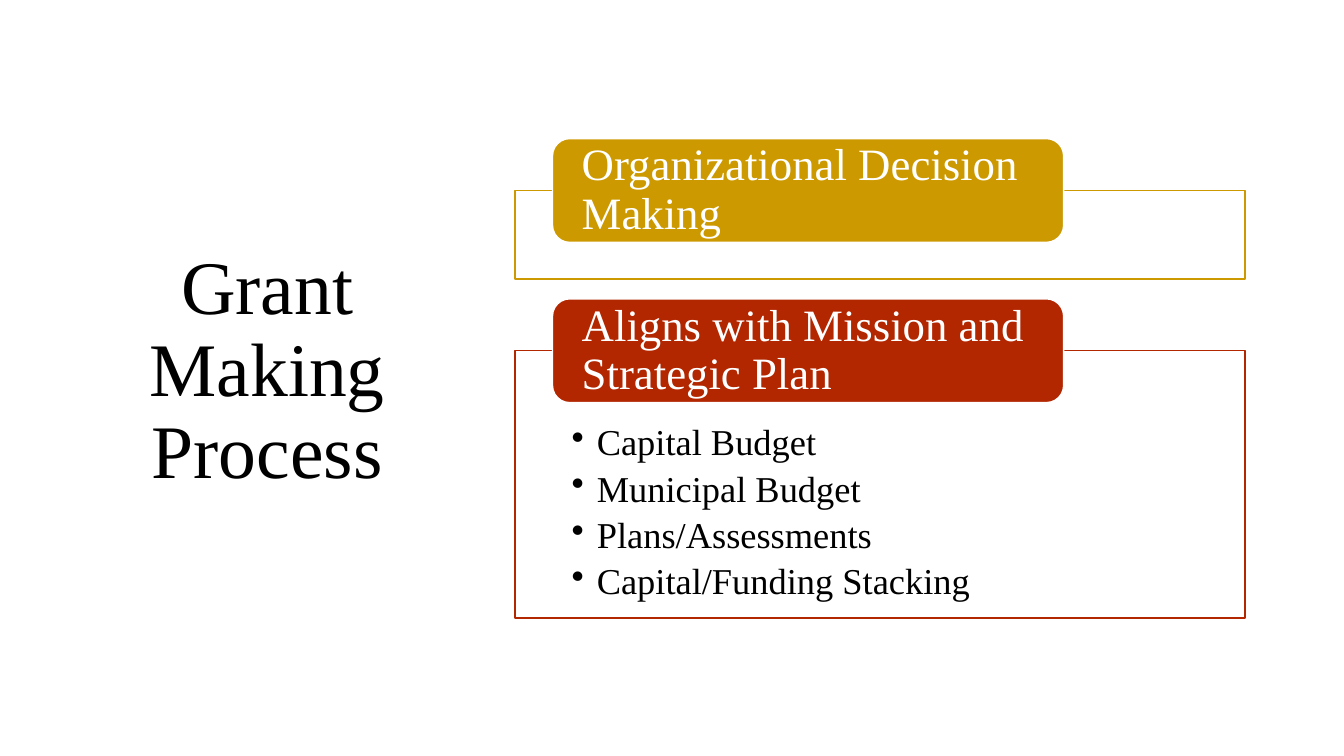
from lxml.etree import SubElement
from pptx import Presentation
from pptx.dml.color import RGBColor
from pptx.enum.shapes import MSO_SHAPE as Shape
from pptx.enum.text import MSO_ANCHOR as Anchor, PP_ALIGN as Align
from pptx.oxml.ns import qn
from pptx.util import Inches, Pt

FONT = "Times New Roman"
PANEL_LEFT, PANEL_WIDTH = 5.11, 7.24
LABEL_LEFT, LABEL_WIDTH, LABEL_HEIGHT = 5.48, 5.07, 1.03
LABEL_RISE = 0.515
SECTIONS = [
    ("Organizational Decision Making", "CC9900", 1.89, 0.88, []),
    ("Aligns with Mission and Strategic Plan", "B22600", 3.48, 2.65,
     ["Capital Budget", "Municipal Budget", "Plans/Assessments",
      "Capital/Funding Stacking"]),
]


def color(code):
    """Turn a hex string into a colour."""
    return RGBColor.from_string(code)


def write(box, lines, size, code, align, anchor, insets):
    """Fill a box with paragraphs in one style."""
    frame = box.text_frame
    frame.word_wrap = True
    frame.vertical_anchor = anchor
    (frame.margin_left, frame.margin_top,
     frame.margin_right, frame.margin_bottom) = map(Inches, insets)
    frame.text = "\n".join(lines)
    for para in frame.paragraphs:
        para.alignment = align
        para.line_spacing = 0.9
        for span in para.runs:
            span.font.name = FONT
            span.font.size = Pt(size)
            span.font.color.rgb = color(code)


def add_bullets(box):
    """Give each paragraph a hanging bullet."""
    for para in box.text_frame.paragraphs:
        para.space_after = Pt(5)
        props = para._p.get_or_add_pPr()
        props.set("marL", str(Inches(0.25)))
        props.set("indent", str(-Inches(0.25)))
        SubElement(props, qn("a:buChar"), char="•")


def add_block(page, kind, place, fill, line):
    """Draw a filled and outlined shape."""
    block = page.shapes.add_shape(kind, *map(Inches, place))
    block.shadow.inherit = False
    block.fill.solid()
    block.fill.fore_color.rgb = color(fill)
    block.line.color.rgb = color(line)
    block.line.width = Pt(1)
    return block


def add_title(page, text):
    """Place the centred slide title."""
    box = page.shapes.add_textbox(*map(Inches, (0.57, 0.68, 4.16, 6.02)))
    write(box, [text], 54, "000000", Align.CENTER, Anchor.MIDDLE,
          (0.1, 0.05, 0.1, 0.05))


def add_section(page, heading, accent, top, height, items):
    """Draw an outlined panel with its overlapping heading label."""
    panel = add_block(page, Shape.RECTANGLE,
                      (PANEL_LEFT, top, PANEL_WIDTH, height), "FFFFFF", accent)
    solid = panel.fill._xPr.find(qn("a:solidFill"))
    SubElement(solid[0], qn("a:alpha"), val="90000")
    if items:
        write(panel, items, 26, "000000", Align.LEFT, Anchor.TOP,
              (0.56, 0.73, 0.56, 0.2))
        add_bullets(panel)
    label = add_block(page, Shape.ROUNDED_RECTANGLE,
                      (LABEL_LEFT, top - LABEL_RISE, LABEL_WIDTH, LABEL_HEIGHT),
                      accent, "FFFFFF")
    write(label, [heading], 32, "FFFFFF", Align.LEFT, Anchor.MIDDLE,
          (0.24, 0.05, 0.24, 0.05))


def main():
    """Build and save the slide."""
    deck = Presentation()
    deck.slide_width, deck.slide_height = Inches(13.33), Inches(7.5)
    page = deck.slides.add_slide(deck.slide_layouts[6])
    add_title(page, "Grant Making Process")
    for section in SECTIONS:
        add_section(page, *section)
    deck.save("out.pptx")


if __name__ == "__main__":
    main()
